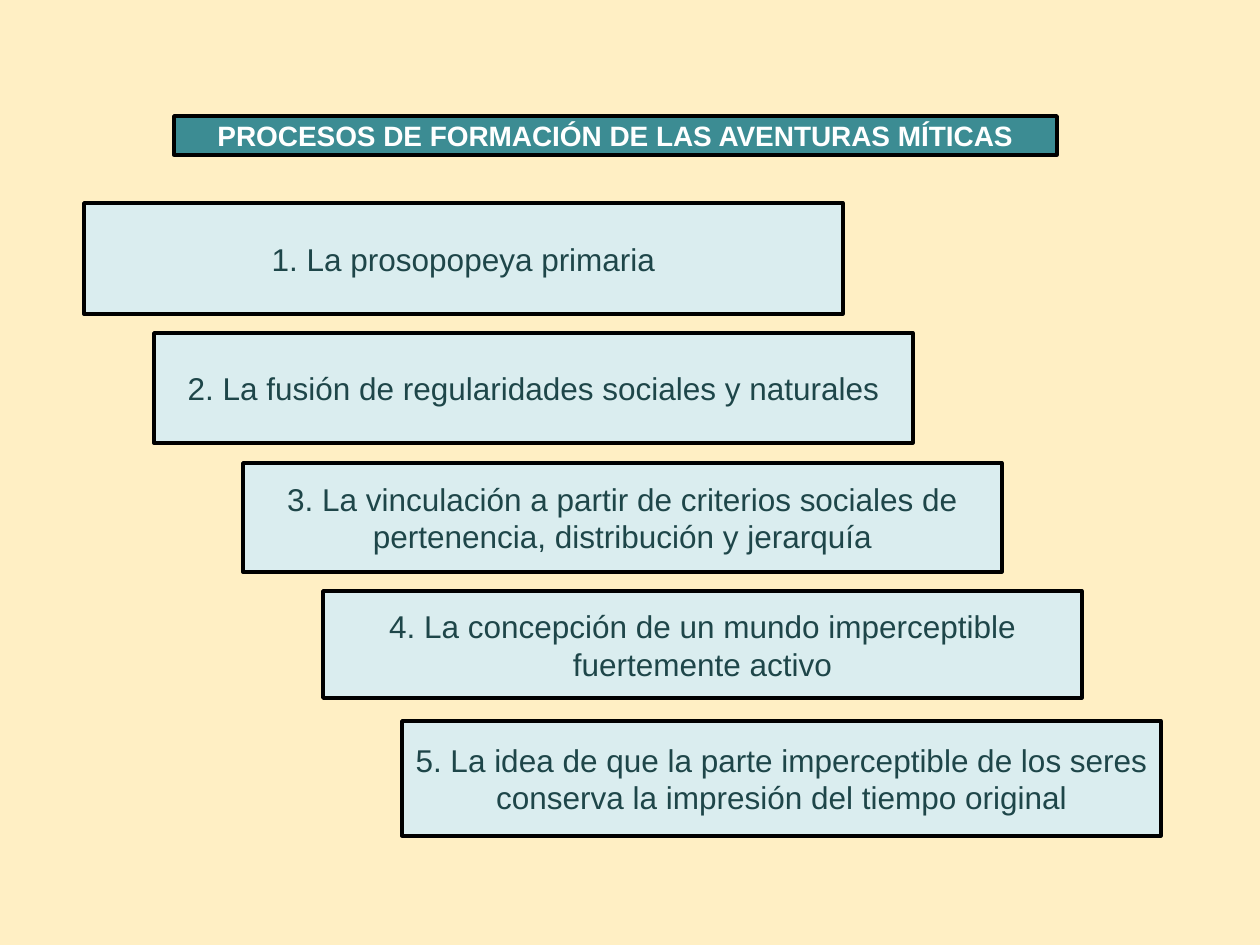
from pptx import Presentation
from pptx.dml.color import RGBColor
from pptx.enum.shapes import MSO_SHAPE
from pptx.enum.text import MSO_ANCHOR, MSO_AUTO_SIZE, PP_ALIGN
from pptx.util import Pt

PX = 914400 // 126  # EMU per pixel, 126 px to the inch
RECT = MSO_SHAPE.RECTANGLE
MIDDLE = MSO_ANCHOR.MIDDLE
NO_FIT = MSO_AUTO_SIZE.NONE
CENTER = PP_ALIGN.CENTER

COLORS = {
    "background": "FFEFC4",
    "banner": "3C8C93",
    "banner_text": "FFFFFF",
    "step": "DAEDEF",
    "step_text": "1E4649",
    "line": "000000",
}

TITLE = "PROCESOS DE FORMACIÓN DE LAS AVENTURAS MÍTICAS"
STEP_WIDTH = 759
# left, top, height, text
STEPS = [
    (84, 203, 111, "1. La prosopopeya primaria"),
    (154, 333, 110, "2. La fusión de regularidades sociales y naturales"),
    (243, 463, 109, "3. La vinculación a partir de criterios sociales de "
                    "pertenencia, distribución y jerarquía"),
    (323, 591, 107, "4. La concepción de un mundo imperceptible "
                    "fuertemente activo"),
    (402, 721, 115, "5. La idea de que la parte imperceptible de los seres "
                    "conserva la impresión del tiempo original"),
]


def rgb(name):
    return RGBColor.from_string(COLORS[name])


def px(*lengths):
    return [n * PX for n in lengths]


def format_box(sp, text, kind, size, bold=False):
    """Fill, outline and centred text shared by the banner and the steps."""
    sp.fill.solid()
    sp.fill.fore_color.rgb = rgb(kind)
    sp.line.color.rgb = rgb("line")
    sp.line.width = Pt(2)
    tf = sp.text_frame
    tf.text = text
    tf.word_wrap = True
    tf.auto_size = NO_FIT
    tf.vertical_anchor = MIDDLE
    p = tf.paragraphs[0]
    p.alignment = CENTER
    p.font.name = "Arial"
    p.font.size = Pt(size)
    p.font.bold = bold
    p.font.color.rgb = rgb(kind + "_text")


def add_banner(s):
    sp = s.shapes.title
    sp.left, sp.top, sp.width, sp.height = px(174, 116, 883, 39)
    format_box(sp, TITLE, "banner", 16, bold=True)


def add_step(s, left, top, height, text):
    sp = s.shapes.add_shape(RECT, *px(left, top, STEP_WIDTH, height))
    sp.shadow.inherit = False
    format_box(sp, text, "step", 18)


def main():
    prs = Presentation()
    prs.slide_width, prs.slide_height = px(1260, 945)
    s = prs.slides.add_slide(prs.slide_layouts[5])
    s.background.fill.solid()
    s.background.fill.fore_color.rgb = rgb("background")

    # Title banner
    add_banner(s)

    # Staircase of the five processes
    for step in STEPS:
        add_step(s, *step)

    prs.save("out.pptx")


if __name__ == "__main__":
    main()
